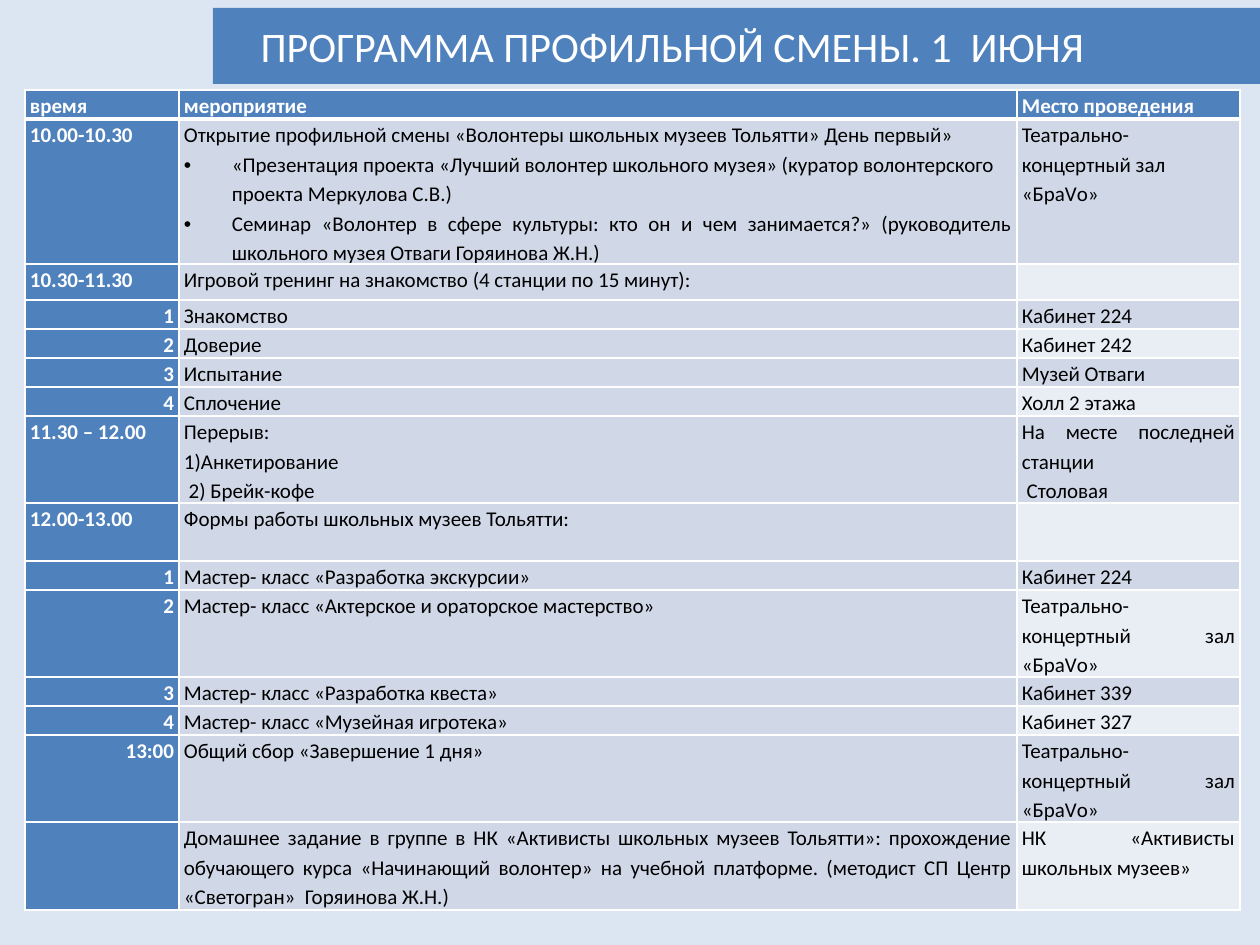
from dataclasses import dataclass

from lxml.etree import SubElement
from pptx import Presentation
from pptx.dml.color import RGBColor
from pptx.enum.shapes import MSO_SHAPE as Shape
from pptx.enum.text import MSO_ANCHOR as Anchor, MSO_AUTO_SIZE as AutoSize, PP_ALIGN as Align
from pptx.oxml.ns import qn
from pptx.util import Emu, Pt

SCALE = 914400 / 126
FONT = "Calibri"
COLORS = {"page": "DCE6F2", "blue": "4F81BD", "white": "FFFFFF", "black": "000000",
          "band": "D0D8E8", "pale": "E9EDF4"}
COLUMNS = [154, 838, 223]


@dataclass
class Line:
    """One paragraph of a schedule cell."""
    text: str
    align: Align = Align.JUSTIFY
    bullet: bool = False


HALL = "Театрально- концертный зал «БраVо»"
SCHEDULE = [
    (29, "время", [Line("мероприятие", Align.LEFT)], [Line("Место проведения", Align.LEFT)]),
    (145, "10.00-10.30", [
        Line("Открытие профильной смены «Волонтеры школьных музеев Тольятти» День первый»", Align.LEFT),
        Line("«Презентация проекта «Лучший волонтер школьного музея» "
             "(куратор волонтерского проекта Меркулова С.В.)", Align.LEFT, True),
        Line("Семинар «Волонтер в сфере культуры: кто он и чем занимается?» "
             "(руководитель школьного музея Отваги Горяинова Ж.Н.)", bullet=True)],
     [Line(HALL, Align.LEFT)]),
    (36, "10.30-11.30", [Line("Игровой тренинг на знакомство (4 станции по 15 минут):")], []),
    (29, "1", [Line("Знакомство")], [Line("Кабинет 224")]),
    (29, "2", [Line("Доверие")], [Line("Кабинет 242")]),
    (29, "3", [Line("Испытание")], [Line("Музей Отваги")]),
    (29, "4", [Line("Сплочение")], [Line("Холл 2 этажа")]),
    (87, "11.30 – 12.00", [Line("Перерыв:"), Line("1)Анкетирование"), Line(" 2) Брейк-кофе")],
     [Line("На месте последней станции"), Line(" Столовая")]),
    (58, "12.00-13.00", [Line("Формы работы школьных музеев Тольятти:")], []),
    (29, "1", [Line("Мастер- класс «Разработка экскурсии»")], [Line("Кабинет 224")]),
    (87, "2", [Line("Мастер- класс «Актерское и ораторское мастерство»")], [Line(HALL)]),
    (29, "3", [Line("Мастер- класс «Разработка квеста»")], [Line("Кабинет 339")]),
    (29, "4", [Line("Мастер- класс «Музейная игротека»")], [Line("Кабинет 327")]),
    (87, "13:00", [Line("Общий сбор «Завершение 1 дня»")], [Line(HALL)]),
    (88, "", [Line("Домашнее задание в группе в НК «Активисты школьных музеев Тольятти»: "
                   "прохождение обучающего курса «Начинающий волонтер» на учебной платформе. "
                   "(методист СП Центр «Светогран»  Горяинова Ж.Н.)")],
     [Line("НК «Активисты школьных музеев»")]),
]


def px(length):
    """Turn a length in px into EMU."""
    return Emu(round(length * SCALE))


def paint(fill, color):
    """Give a fill one solid colour."""
    fill.solid()
    fill.fore_color.rgb = RGBColor.from_string(COLORS[color])


def add_text(para, text, size, color, bold=False):
    """Add one formatted run to a paragraph."""
    span = para.add_run()
    span.text = text
    span.font.name, span.font.size, span.font.bold = FONT, Pt(size), bold
    span.font.color.rgb = RGBColor.from_string(COLORS[color])


def add_bullet(para):
    """Give a paragraph a hanging bullet."""
    props = para._p.get_or_add_pPr()
    props.set("marL", str(px(48)))
    props.set("indent", str(px(-48)))
    SubElement(props, qn("a:buFont"), typeface="Arial")
    SubElement(props, qn("a:buChar"), char="•")


def add_borders(cell, top, bottom):
    """Draw white cell borders, with top and bottom widths in points."""
    props = cell._tc.get_or_add_tcPr()
    for side, width in (("L", 1), ("R", 1), ("T", top), ("B", bottom)):
        line = SubElement(props, qn(f"a:ln{side}"), w=str(Pt(width)))
        SubElement(SubElement(line, qn("a:solidFill")), qn("a:srgbClr"), val=COLORS["white"])


def fill_cell(cell, lines, fill, color, bold, top, bottom):
    """Format one cell and write its lines."""
    cell.margin_left = cell.margin_right = px(5)
    cell.margin_top = cell.margin_bottom = 0
    add_borders(cell, top, bottom)
    paint(cell.fill, fill)
    frame = cell.text_frame
    if not lines:
        frame.paragraphs[0]._p.get_or_add_endParaRPr().set("sz", "1200")
    for index, line in enumerate(lines):
        para = frame.add_paragraph() if index else frame.paragraphs[0]
        para.alignment, para.line_spacing = line.align, 1.15
        if line.bullet:
            add_bullet(para)
        add_text(para, line.text, 12, color, bold)


def add_heading(page, left, top, width, height):
    """Place the blue band and the slide title on it."""
    band = page.shapes.add_shape(Shape.RECTANGLE, px(left), px(top), px(width), px(height))
    band.shadow.inherit = False
    paint(band.fill, "blue")
    band.line.fill.background()
    page.shapes._spTree.insert(2, band._element)
    title = page.shapes.title
    title.left, title.top = px(left + 35), px(top + 6)
    title.width, title.height = px(857), px(64)
    frame = title.text_frame
    frame.word_wrap, frame.auto_size = False, AutoSize.SHAPE_TO_FIT_TEXT
    frame.vertical_anchor = Anchor.TOP
    para = frame.paragraphs[0]
    para.alignment = Align.LEFT
    add_text(para, "ПРОГРАММА ПРОФИЛЬНОЙ СМЕНЫ. 1  ИЮНЯ", 24, "white")


def add_schedule(page, left, top):
    """Place the schedule table."""
    height = sum(row[0] for row in SCHEDULE)
    frame = page.shapes.add_table(len(SCHEDULE), len(COLUMNS), px(left), px(top),
                                  px(sum(COLUMNS)), px(height))
    table = frame.table
    for column, width in zip(table.columns, COLUMNS):
        column.width = px(width)
    for index, (row_height, time, events, places) in enumerate(SCHEDULE):
        table.rows[index].height = px(row_height)
        header = index == 0
        side = Align.LEFT if header or "." in time else Align.RIGHT
        times = [Line(time, side)] if time else []
        fills = ("blue", "band", "band" if index % 2 else "pale")
        edges = (3 if index == 1 else 1, 3 if header else 1)
        for column, lines in enumerate((times, events, places)):
            accent = header or column == 0
            fill_cell(table.cell(index, column), lines, "blue" if accent else fills[column],
                      "white" if accent else "black", accent, *edges)


def main():
    """Build the deck and save it."""
    deck = Presentation()
    deck.slide_width, deck.slide_height = px(1260), px(945)
    page = deck.slides.add_slide(deck.slide_layouts[5])
    paint(page.background.fill, "page")
    add_heading(page, 213, 8, 1047, 76)
    add_schedule(page, 25, 90)
    deck.save("out.pptx")


if __name__ == "__main__":
    main()
